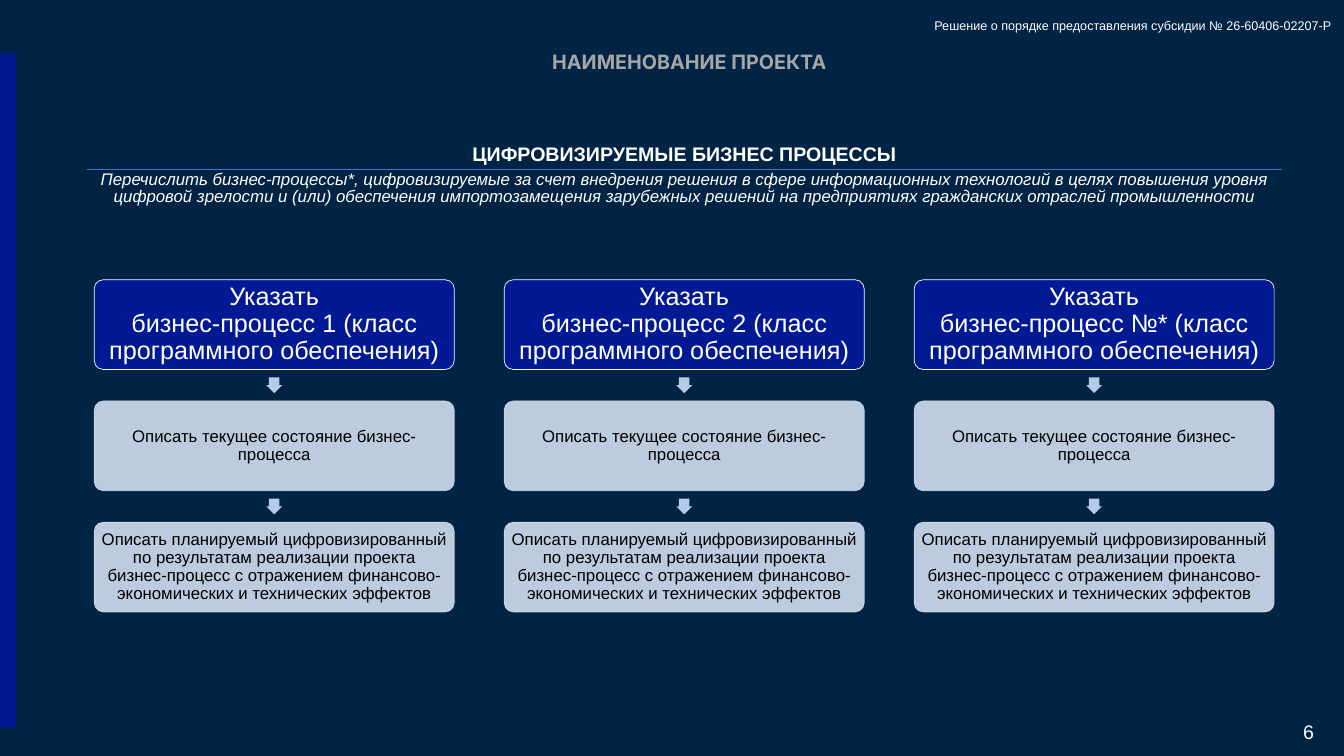
"""Build the slide on the business processes to be digitalised."""
from lxml.etree import SubElement
from pptx import Presentation
from pptx.dml.color import RGBColor
from pptx.enum.shapes import MSO_SHAPE as Shape
from pptx.enum.text import MSO_ANCHOR as Anchor, MSO_AUTO_SIZE as AutoSize, PP_ALIGN as Align
from pptx.oxml.ns import qn
from pptx.util import Cm, Pt

NAVY = RGBColor(0x01, 0x23, 0x44)
BLUE = RGBColor(0x01, 0x19, 0x93)
RULE_BLUE = RGBColor(0x3A, 0x75, 0xCE)
PALE_BLUE = RGBColor(0xD2, 0xDE, 0xEF)
ARROW_BLUE = RGBColor(0xB5, 0xCB, 0xE7)
GREY = RGBColor(0xA6, 0xA6, 0xA6)
WHITE = RGBColor(0xFF, 0xFF, 0xFF)
BLACK = RGBColor(0x00, 0x00, 0x00)

LEFT, TOP = 4.75, 14.1
COLUMN_STEP, ROW_STEP = 20.66, 6.11
BOX_WIDTH, BOX_HEIGHT = 18.14, 4.52
ARROW_SIZE = 0.79

CURRENT_STATE = "Описать текущее состояние бизнес-процесса"
PLANNED_STATE = (
    "Описать планируемый цифровизированный\nпо результатам реализации проекта\n"
    "бизнес-процесс с отражением финансово-экономических и технических эффектов"
)


def write(frame, text, size, color=WHITE, font="Arial", align=Align.CENTER,
          bold=False, italic=False, spacing=None, anchor=Anchor.TOP, margin=None, wrap=True):
    frame.word_wrap = wrap
    frame.vertical_anchor = anchor
    if margin is not None:
        frame.margin_left = frame.margin_right = Cm(margin)
        frame.margin_top = frame.margin_bottom = Cm(margin)
    paragraph = frame.paragraphs[0]
    paragraph.text = text
    paragraph.alignment = align
    paragraph.line_spacing = spacing
    for run in paragraph.runs:
        run.font.name = font
        run.font.size = Pt(size)
        run.font.bold = bold
        run.font.italic = italic
        run.font.color.rgb = color


def add_block(kind, left, top, width, height, fill, outline=None):
    block = slide.shapes.add_shape(kind, Cm(left), Cm(top), Cm(width), Cm(height))
    block.shadow.inherit = False
    block.fill.solid()
    block.fill.fore_color.rgb = fill
    if outline is None:
        block.line.fill.background()
    else:
        block.line.color.rgb = outline
        block.line.width = Pt(1)
    return block


deck = Presentation()
deck.slide_width, deck.slide_height = Cm(67.73), Cm(38.1)
slide = deck.slides.add_slide(deck.slide_layouts[5])
slide.background.fill.solid()
slide.background.fill.fore_color.rgb = NAVY

title = slide.shapes.title
title.left, title.top, title.width, title.height = Cm(4.88), Cm(2.39), Cm(59.72), Cm(1.47)
write(title.text_frame, "НАИМЕНОВАНИЕ ПРОЕКТА", 28.2, GREY, font="Inter", bold=True)
title.text_frame.auto_size = AutoSize.SHAPE_TO_FIT_TEXT

page_number = slide.shapes.add_textbox(Cm(64.49), Cm(36.12), Cm(2.06), Cm(1.55))
write(page_number.text_frame, "6", 28, align=Align.RIGHT, anchor=Anchor.MIDDLE, margin=0.33)

decision = slide.shapes.add_textbox(Cm(46.84), Cm(0.76), Cm(20.88), Cm(1.02))
write(decision.text_frame, "Решение о порядке предоставления субсидии № 26-60406-02207-Р", 18,
      align=Align.LEFT, wrap=False)
decision.text_frame.auto_size = AutoSize.SHAPE_TO_FIT_TEXT

heading = slide.shapes.add_table(2, 1, Cm(4.37), Cm(7.11), Cm(60.22), Cm(4.21)).table
heading.first_row = heading.horz_banding = False
heading.rows[0].height, heading.rows[1].height = Cm(0.91), Cm(3.3)
name_cell, task_cell = heading.cell(0, 0), heading.cell(1, 0)
write(name_cell.text_frame, "ЦИФРОВИЗИРУЕМЫЕ БИЗНЕС ПРОЦЕССЫ", 28, bold=True)
name_cell.text_frame.paragraphs[0].space_after = Pt(6)
write(task_cell.text_frame,
      "Перечислить бизнес-процессы*, цифровизируемые за счет внедрения решения в сфере "
      "информационных технологий в целях повышения уровня цифровой зрелости и (или) "
      "обеспечения импортозамещения зарубежных решений на предприятиях гражданских "
      "отраслей промышленности", 24, italic=True, spacing=0.9)
for cell, rule_side in ((name_cell, "a:lnB"), (task_cell, "a:lnT")):
    properties = cell._tc.get_or_add_tcPr()
    for side in ("a:lnL", "a:lnR", "a:lnT", "a:lnB"):
        border = SubElement(properties, qn(side), w=str(Pt(2.25)))
        if side == rule_side:
            border_fill = SubElement(border, qn("a:solidFill"))
            SubElement(border_fill, qn("a:srgbClr"), val=str(RULE_BLUE))
        else:
            SubElement(border, qn("a:noFill"))
    cell.fill.background()

add_block(Shape.RECTANGLE, 0, 2.69, 0.79, 33.99, BLUE)

for column, process in enumerate(("1", "2", "№*")):
    left = LEFT + column * COLUMN_STEP
    process_name = f"Указать\nбизнес-процесс {process} (класс программного обеспечения)"
    for row, text in enumerate((process_name, CURRENT_STATE, PLANNED_STATE)):
        top = TOP + row * ROW_STEP
        fill, outline = (PALE_BLUE, PALE_BLUE) if row else (BLUE, WHITE)
        step = add_block(Shape.ROUNDED_RECTANGLE, left, top, BOX_WIDTH, BOX_HEIGHT, fill, outline)
        step.adjustments[0] = 0.1
        if row:
            for color in step._element.spPr.iter(qn("a:srgbClr")):
                SubElement(color, qn("a:alpha"), val="90000")
            arrow = add_block(Shape.RIGHT_ARROW, left + (BOX_WIDTH - ARROW_SIZE) / 2,
                              top - 1.19, ARROW_SIZE, ARROW_SIZE, ARROW_BLUE)
            arrow.rotation = 90
            arrow.adjustments[0], arrow.adjustments[1] = 0.67, 0.5
        write(step.text_frame, text, 24 if row else 36, BLACK if row else WHITE,
              spacing=0.9, anchor=Anchor.MIDDLE, margin=0.2 if row else 0.25)

deck.save("out.pptx")
